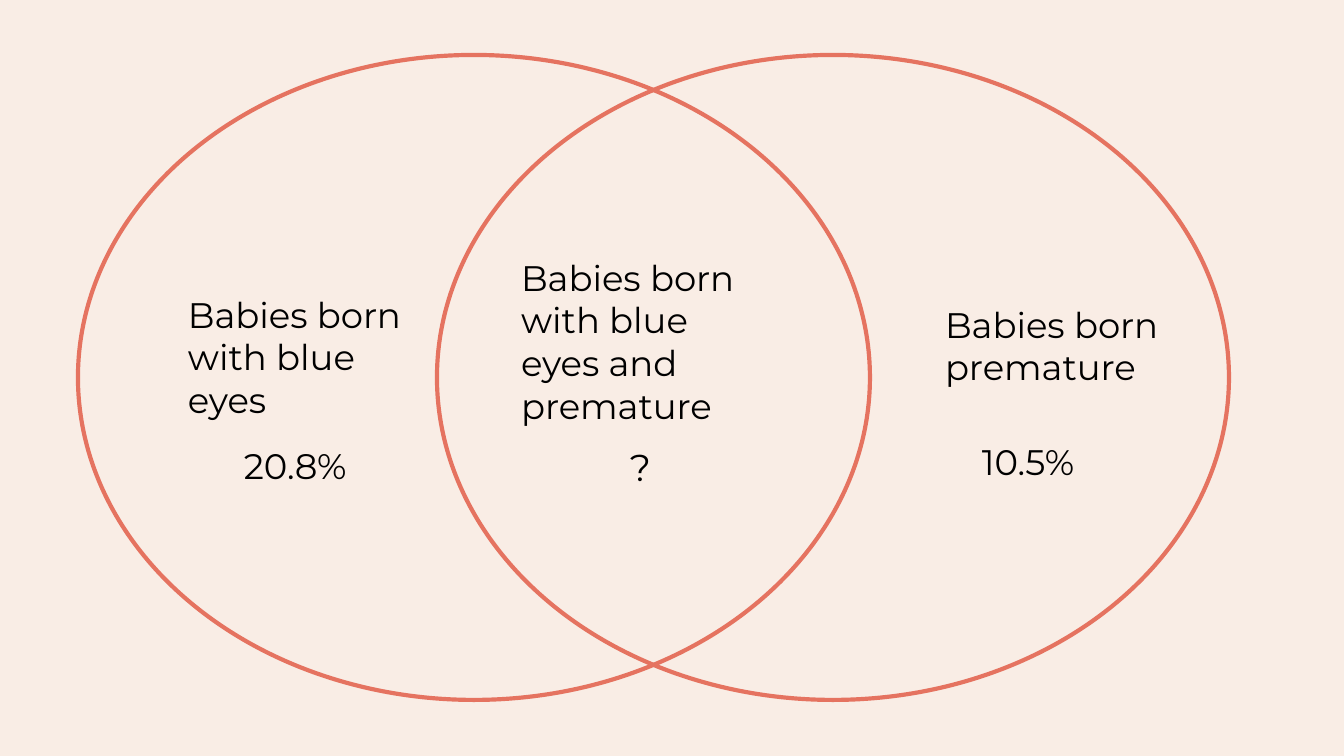
from pptx import Presentation
from pptx.dml.color import RGBColor
from pptx.enum.shapes import MSO_SHAPE
from pptx.enum.text import MSO_AUTO_SIZE
from pptx.util import Emu, Pt

PX_PER_INCH = 134.4
BACKGROUND = "F9EDE5"
CORAL = "E57360"
BLACK = "000000"
FONT = "Montserrat"
INSET = 13


def px(count):
    return Emu(round(count * 914400 / PX_PER_INCH))


def color(hex_string):
    return RGBColor.from_string(hex_string)


def add_ring(group, left, top, width, height):
    """Add an unfilled ellipse, one set of the Venn diagram."""
    ring = group.shapes.add_shape(
        MSO_SHAPE.OVAL, px(left), px(top), px(width), px(height))
    ring.shadow.inherit = False
    ring.fill.background()
    ring.line.color.rgb = color(CORAL)
    ring.line.width = Pt(2.25)


def add_text(page, text, left, top, width, height, size=19, indent=0, grow=False):
    box = page.shapes.add_textbox(px(left), px(top), px(width), px(height))
    frame = box.text_frame
    frame.word_wrap = True
    frame.auto_size = MSO_AUTO_SIZE.SHAPE_TO_FIT_TEXT if grow else MSO_AUTO_SIZE.NONE
    frame.margin_left = px(INSET + indent)
    frame.margin_right = frame.margin_top = frame.margin_bottom = px(INSET)
    span = frame.paragraphs[0].add_run()
    span.text = text
    span.font.name = FONT
    span.font.size = Pt(size)
    span.font.color.rgb = color(BLACK)


def main():
    deck = Presentation()
    deck.slide_width, deck.slide_height = px(1344), px(756)
    page = deck.slides.add_slide(deck.slide_layouts[6])
    page.background.fill.solid()
    page.background.fill.fore_color.rgb = color(BACKGROUND)

    venn = page.shapes.add_group_shape()
    for left in (78, 437):
        add_ring(venn, left, 55, 792, 645)

    add_text(page, "Babies born with blue eyes", 175, 280, 249, 114)
    add_text(page, "Babies born premature", 932, 290, 277, 113, grow=True)
    add_text(page, "Babies born with blue eyes and premature",
             508, 243, 277, 199, grow=True)

    add_text(page, "20.8%", 231, 431, 134, 78)
    add_text(page, "10.5%", 969, 427, 134, 78)
    add_text(page, "?", 567, 431, 134, 78, size=20, indent=50)

    deck.save("out.pptx")


if __name__ == "__main__":
    main()
